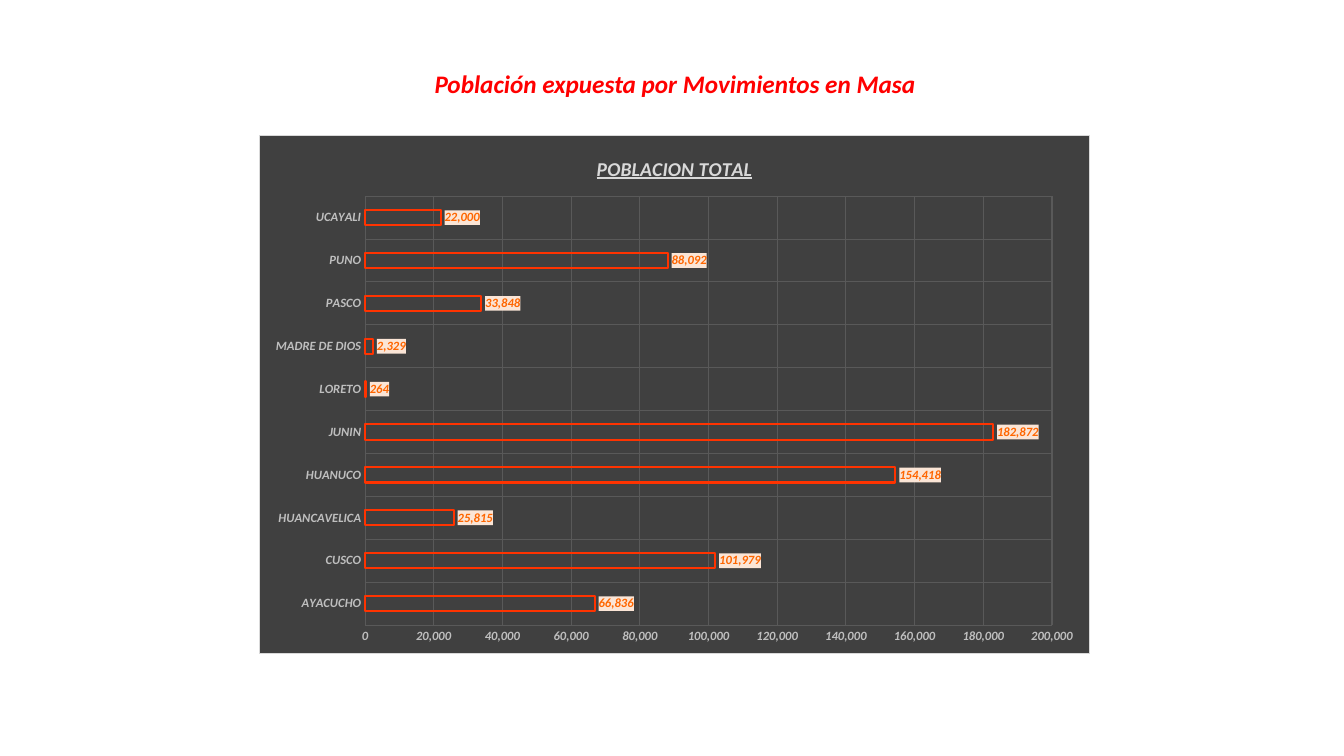
from lxml import etree
from pptx import Presentation
from pptx.chart.data import CategoryChartData
from pptx.dml.color import RGBColor
from pptx.enum.chart import XL_CHART_TYPE, XL_LABEL_POSITION, XL_TICK_MARK
from pptx.enum.text import MSO_ANCHOR, PP_ALIGN
from pptx.oxml import parse_xml
from pptx.oxml.ns import nsdecls, qn
from pptx.util import Pt

BAR_CLUSTERED = XL_CHART_TYPE.BAR_CLUSTERED
OUTSIDE_END = XL_LABEL_POSITION.OUTSIDE_END
NO_TICK = XL_TICK_MARK.NONE
MIDDLE = MSO_ANCHOR.MIDDLE
CENTER = PP_ALIGN.CENTER

EMU_PER_PX = 9144  # 100 px to the inch
TITLE_ONLY = 5
NUMBER_FORMAT = "#,##0"
COLORS = {
    "title": "FF0000",
    "panel": "404040",
    "border": "D9D9D9",
    "grid": "595959",
    "axis": "BFBFBF",
    "bar": "FF3300",
    "label": "FF6600",
    "label_fill": "FBE5D6",
}
POPULATION = {
    "AYACUCHO": 66836,
    "CUSCO": 101979,
    "HUANCAVELICA": 25815,
    "HUANUCO": 154418,
    "JUNIN": 182872,
    "LORETO": 264,
    "MADRE DE DIOS": 2329,
    "PASCO": 33848,
    "PUNO": 88092,
    "UCAYALI": 22000,
}


def px(value):
    return value * EMU_PER_PX


def rgb(name):
    return RGBColor.from_string(COLORS[name])


class SlideBuilder:
    def __init__(self, slide, font_name):
        self.slide = slide
        self.font_name = font_name

    def style_font(self, font, size, color):
        font.name = self.font_name
        font.size = Pt(size)
        font.bold = font.italic = True
        font.color.rgb = rgb(color)

    def title(self, text, left, top, width, height):
        shape = self.slide.shapes.title
        shape.left, shape.top = px(left), px(top)
        shape.width, shape.height = px(width), px(height)
        frame = shape.text_frame
        frame.word_wrap = False
        frame.vertical_anchor = MIDDLE
        paragraph = frame.paragraphs[0]
        paragraph.alignment = CENTER
        run = paragraph.add_run()
        run.text = text
        self.style_font(run.font, 18, "title")

    def bar_chart(self, heading, values, left, top, width, height):
        data = CategoryChartData(number_format=NUMBER_FORMAT)
        data.categories = list(values)
        data.add_series(heading, list(values.values()))
        chart = self.slide.shapes.add_chart(
            BAR_CLUSTERED, px(left), px(top), px(width), px(height), data
        ).chart
        chart.has_legend = False
        chart.font.name = self.font_name
        chart.font.size = Pt(10)
        self.chart_heading(chart, heading)
        self.chart_panel(chart)
        self.bars(chart.plots[0])
        for axis in (chart.category_axis, chart.value_axis):
            self.axis(axis)
        chart.value_axis.minimum_scale = 0
        chart.value_axis.maximum_scale = 200000
        chart.value_axis.major_unit = 20000
        chart.value_axis.tick_labels.number_format = NUMBER_FORMAT
        chart.value_axis.tick_labels.number_format_is_linked = False

    def chart_heading(self, chart, heading):
        chart.has_title = True
        run = chart.chart_title.text_frame.paragraphs[0].add_run()
        run.text = heading
        self.style_font(run.font, 14, "border")
        run.font.underline = True

    def chart_panel(self, chart):
        # Dark background with a thin border
        chart_element = chart.element.find(qn("c:chart"))
        chart_element.addnext(self.fill_properties("panel", "border"))

        # Fixed plot area, as fractions of the chart
        plot_area = chart_element.find(qn("c:plotArea"))
        for old_layout in plot_area.findall(qn("c:layout")):
            plot_area.remove(old_layout)
        layout = parse_xml(f"<c:layout {nsdecls('c')}/>")
        manual = etree.SubElement(layout, qn("c:manualLayout"))
        settings = {
            "layoutTarget": "inner", "xMode": "edge", "yMode": "edge",
            "x": 0.127, "y": 0.117, "w": 0.828, "h": 0.828,
        }
        for tag, value in settings.items():
            etree.SubElement(manual, qn(f"c:{tag}")).set("val", str(value))
        plot_area.insert(0, layout)

    def fill_properties(self, fill, border=None):
        line = ""
        if border:
            line = (f'<a:ln w="{Pt(0.75)}"><a:solidFill><a:srgbClr '
                    f'val="{COLORS[border]}"/></a:solidFill></a:ln>')
        return parse_xml(
            f"<c:spPr {nsdecls('c', 'a')}><a:solidFill><a:srgbClr "
            f'val="{COLORS[fill]}"/></a:solidFill>{line}</c:spPr>'
        )

    def bars(self, plot):
        plot.gap_width = 182
        plot.overlap = -50
        plot.vary_by_categories = False
        series = plot.series[0]
        series.format.fill.background()
        series.format.line.color.rgb = rgb("bar")
        series.format.line.width = Pt(1.5)
        labels = series.data_labels
        labels.show_value = True
        labels.position = OUTSIDE_END
        labels.number_format = NUMBER_FORMAT
        labels.number_format_is_linked = False
        self.style_font(labels.font, 9, "label")
        number_format = series.data_labels._element.find(qn("c:numFmt"))
        number_format.addnext(self.fill_properties("label_fill"))

    def axis(self, axis):
        axis.major_tick_mark = axis.minor_tick_mark = NO_TICK
        axis.format.line.fill.background()
        axis.has_major_gridlines = True
        grid = axis.major_gridlines.format.line
        grid.color.rgb = rgb("grid")
        grid.width = Pt(0.75)
        self.style_font(axis.tick_labels.font, 9, "axis")


def main():
    presentation = Presentation()
    presentation.slide_width = px(1333)
    presentation.slide_height = px(750)
    layout = presentation.slide_layouts[TITLE_ONLY]
    builder = SlideBuilder(presentation.slides.add_slide(layout), "Calibri")

    # Slide title
    builder.title("Población expuesta por Movimientos en Masa", 418, 63, 503, 40)

    # Exposed population by region
    builder.bar_chart("POBLACION TOTAL", POPULATION, 257, 134, 824, 515)

    presentation.save("out.pptx")


if __name__ == "__main__":
    main()
